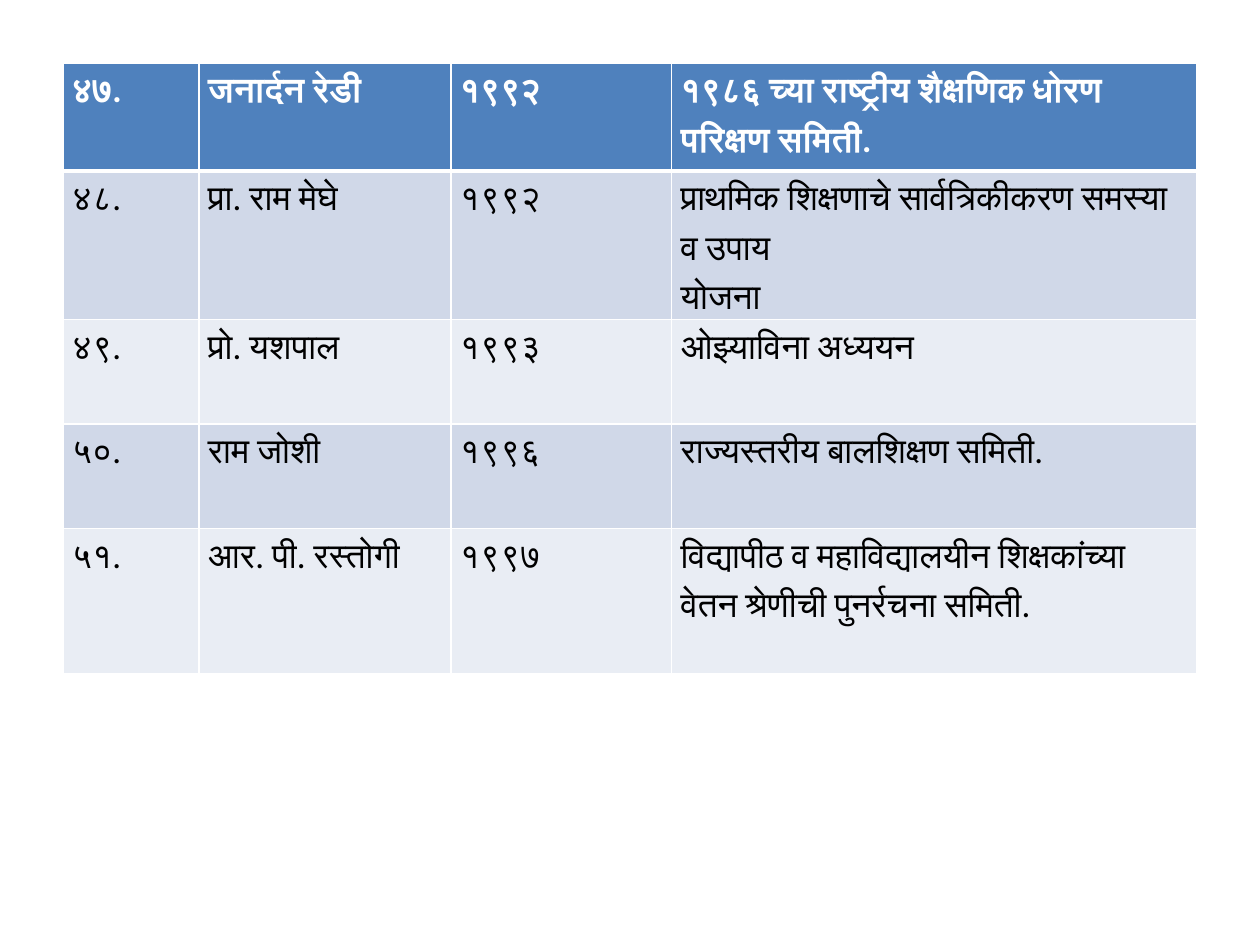
"""Build a slide with a table of education committees, their years and subjects."""
import dataclasses

import lxml.etree
import pptx
import pptx.dml.color
import pptx.oxml.ns
import pptx.table
import pptx.text.text
import pptx.util

COLORS = {
    "header": "4F81BD",
    "odd": "D0D8E8",
    "even": "E9EDF4",
    "border": "FFFFFF",
    "header_text": "FFFFFF",
    "body_text": "000000",
}
FONT = "Calibri"
COLUMN_WIDTHS = (2.74, 5.08, 4.45, 10.59)


@dataclasses.dataclass(frozen=True)
class Committee:
    number: str
    chair: str
    year: str
    subject: str
    height: float


COMMITTEES = (
    Committee("४७.", "जनार्दन रेडी", "१९९२", "१९८६ च्या राष्ट्रीय शैक्षणिक धोरण परिक्षण समिती.", 2.18),
    Committee("४८.", "प्रा. राम मेघे", "१९९२", "प्राथमिक शिक्षणाचे सार्वत्रिकीकरण समस्या व उपाय\nयोजना", 2.92),
    Committee("४९.", "प्रो. यशपाल", "१९९३", "ओझ्याविना अध्ययन", 2.11),
    Committee("५०.", "राम जोशी", "१९९६", "राज्यस्तरीय बालशिक्षण समिती.", 2.11),
    Committee("५१.", "आर. पी. रस्तोगी", "१९९७", "विद्यापीठ व महाविद्यालयीन शिक्षकांच्या वेतन श्रेणीची पुनर्रचना समिती.", 2.92),
)


def color(name: str) -> pptx.dml.color.RGBColor:
    return pptx.dml.color.RGBColor.from_string(COLORS[name])


def add_child(parent: lxml.etree.ElementBase, tag: str, **attributes: str) -> lxml.etree.ElementBase:
    return lxml.etree.SubElement(parent, pptx.oxml.ns.qn(tag), attributes)


def add_borders(cell: pptx.table._Cell, top: float, bottom: float) -> None:
    properties = cell._tc.get_or_add_tcPr()
    for side, width in (("L", 1), ("R", 1), ("T", top), ("B", bottom)):
        line = add_child(properties, f"a:ln{side}", w=str(pptx.util.Pt(width)))
        add_child(add_child(line, "a:solidFill"), "a:srgbClr", val=COLORS["border"])


def add_text(paragraph: pptx.text.text._Paragraph, text: str, header: bool) -> None:
    paragraph.line_spacing = 1.15
    paragraph.space_before = paragraph.space_after = pptx.util.Pt(0.1)
    run = paragraph.add_run()
    run.text = text
    run.font.name = FONT
    run.font.size = pptx.util.Pt(20)
    run.font.bold = header
    run.font.color.rgb = color("header_text" if header else "body_text")
    add_child(run.font._element, "a:cs", typeface=FONT)


def fill_cell(cell: pptx.table._Cell, text: str, row_index: int) -> None:
    header = row_index == 0
    add_borders(cell, top=3 if row_index == 1 else 1, bottom=3 if header else 1)
    cell.fill.solid()
    cell.fill.fore_color.rgb = color("header" if header else "odd" if row_index % 2 else "even")
    cell.margin_left = cell.margin_right = pptx.util.Cm(0.18)
    cell.margin_top = cell.margin_bottom = 0
    for index, line in enumerate(text.split("\n")):
        frame = cell.text_frame
        add_text(frame.add_paragraph() if index else frame.paragraphs[0], line, header)


def main() -> None:
    presentation = pptx.Presentation()
    presentation.slide_width = pptx.util.Cm(25.4)
    presentation.slide_height = pptx.util.Cm(19.05)
    slide = presentation.slides.add_slide(presentation.slide_layouts[6])
    table = slide.shapes.add_table(
        len(COMMITTEES),
        len(COLUMN_WIDTHS),
        pptx.util.Cm(1.27),
        pptx.util.Cm(1.27),
        pptx.util.Cm(sum(COLUMN_WIDTHS)),
        pptx.util.Cm(sum(committee.height for committee in COMMITTEES)),
    ).table
    for column, width in zip(table.columns, COLUMN_WIDTHS):
        column.width = pptx.util.Cm(width)
    for row_index, committee in enumerate(COMMITTEES):
        row = table.rows[row_index]
        row.height = pptx.util.Cm(committee.height)
        texts = (committee.number, committee.chair, committee.year, committee.subject)
        for cell, text in zip(row.cells, texts):
            fill_cell(cell, text, row_index)
    presentation.save("out.pptx")


if __name__ == "__main__":
    main()
